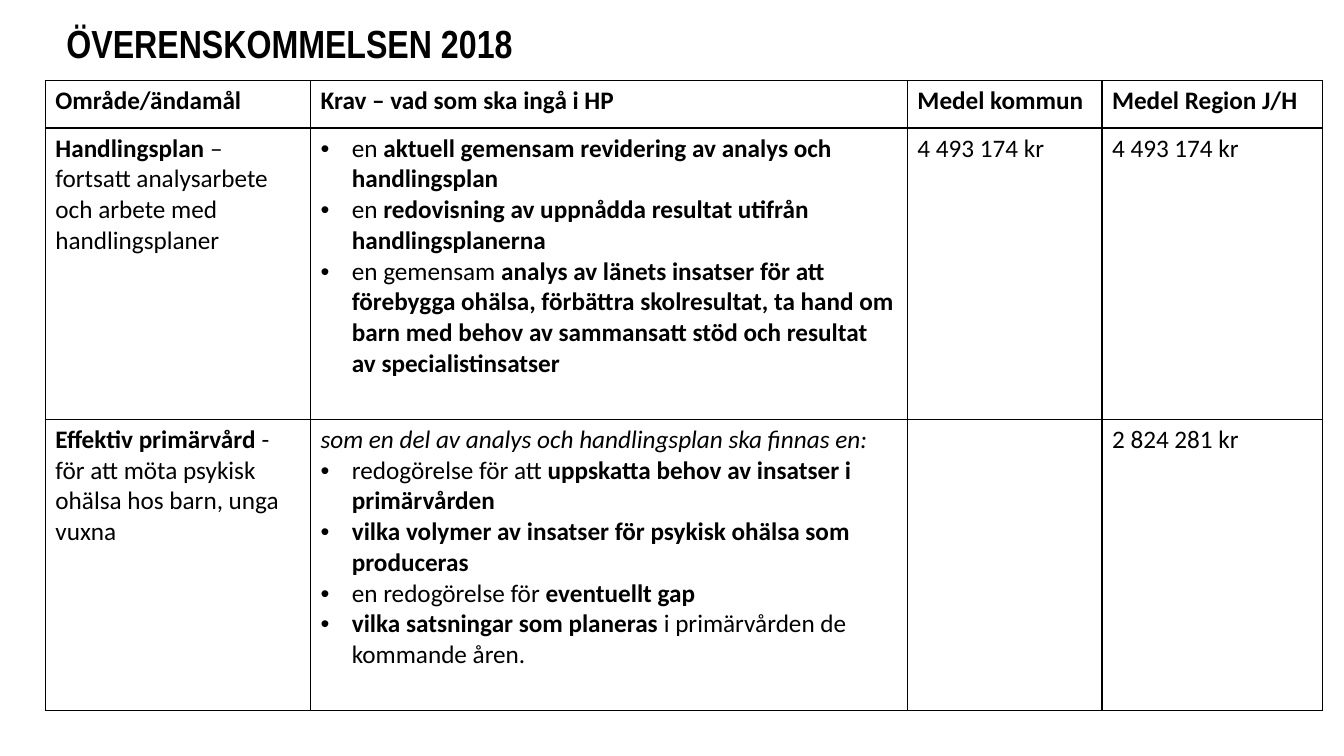
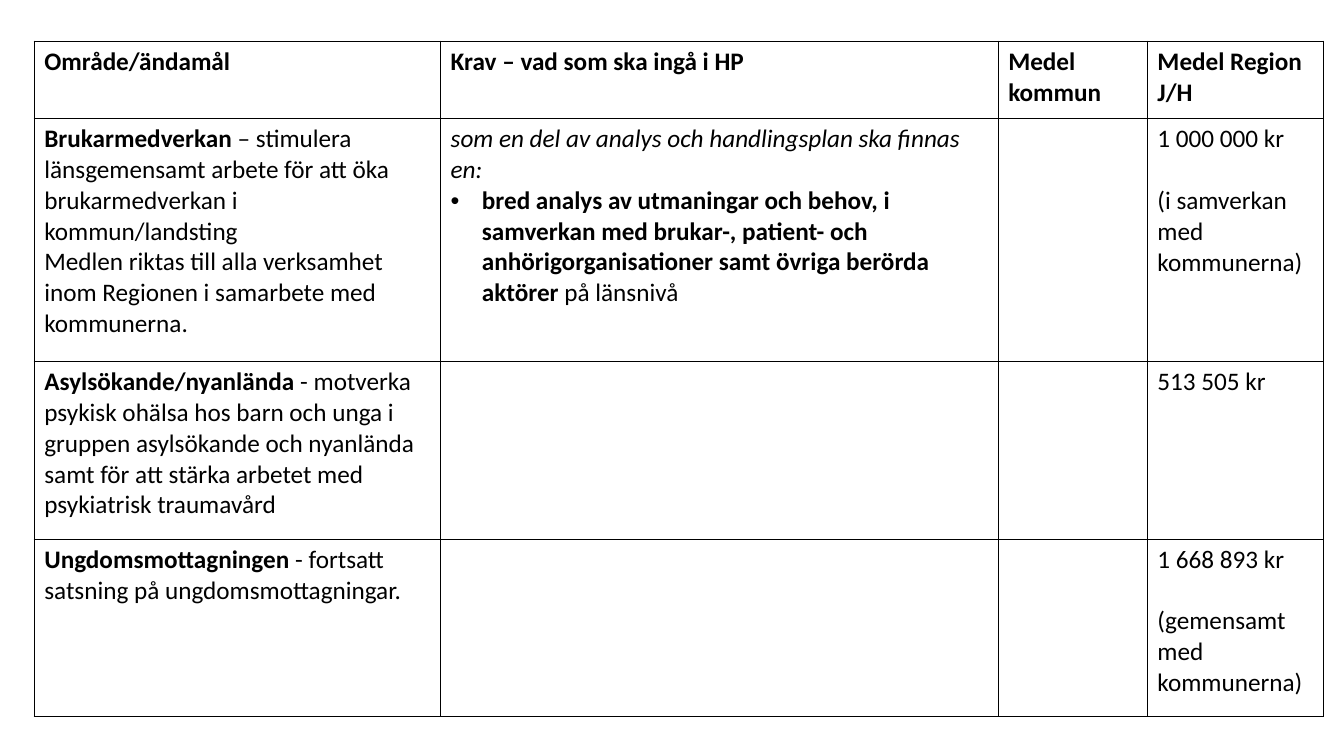
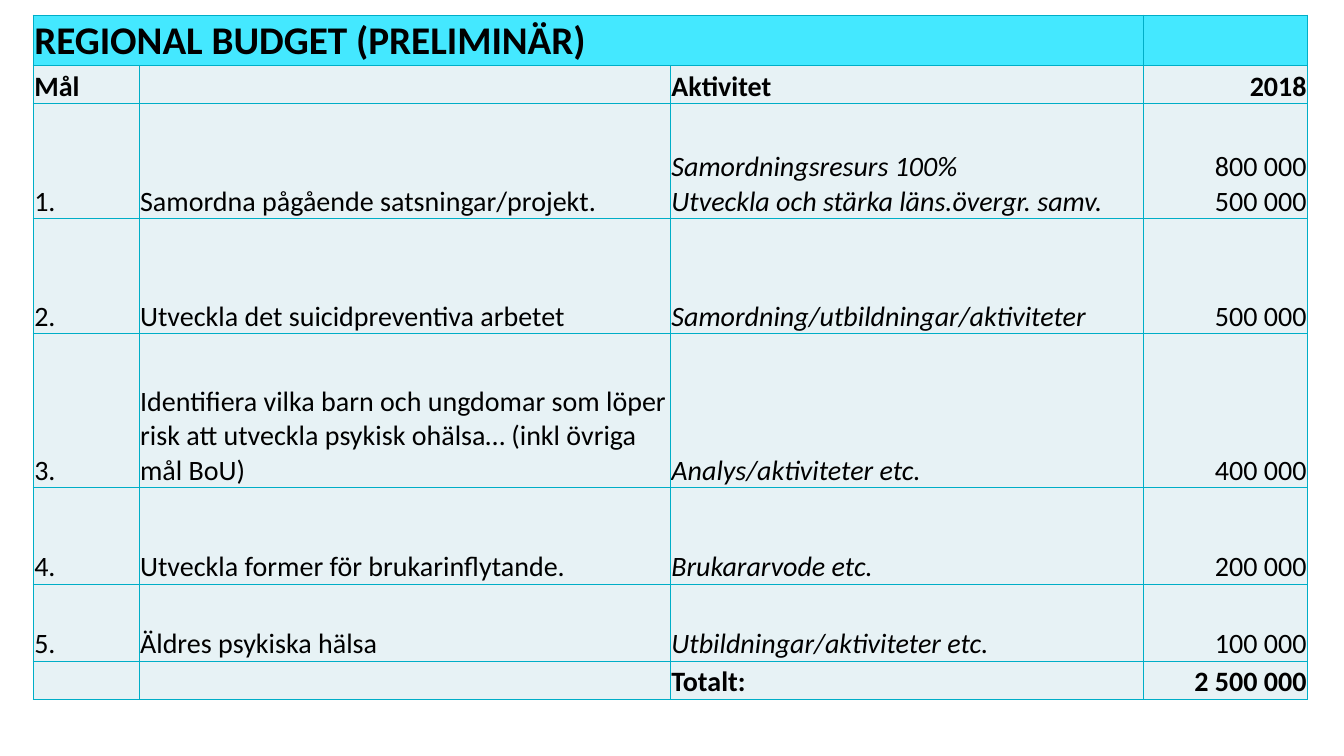
"""Build three slides on the 2018 agreement and its regional budget."""
from dataclasses import dataclass

from lxml import etree
from pptx import Presentation
from pptx.dml.color import RGBColor
from pptx.enum import text
from pptx.oxml import ns
from pptx.util import Inches, Pt


@dataclass(frozen=True)
class Theme:
    """Colours, fonts and type sizes shared by the slides."""
    ink: str = "000000"
    edge: str = "00AEC7"
    band: str = "44E8FF"
    pale: str = "E7F2F5"
    head: str = "Arial Narrow"
    font: str = "Calibri"
    big: int = 28
    mid: int = 20
    base: int = 18
    gap: int = 22
    dent: float = 0.31


@dataclass(frozen=True)
class Para:
    """A paragraph of (text, style) runs."""
    runs: tuple
    dot: bool = False
    gap: int = 0
    right: bool = False


@dataclass(frozen=True)
class Look:
    """The dress of one kind of table."""
    line: str
    size: int
    fill: str = ""
    tight: bool = False


T = Theme()
PLAN = Look(T.ink, T.base)
COST = Look(T.edge, T.mid, T.pale, True)


def para(*runs, **opts):
    """Make a paragraph; bare strings are plain runs."""
    return Para(tuple((r, "") if isinstance(r, str) else r for r in runs), **opts)


def bold(words):
    """Mark a run as bold."""
    return words, "b"


def slant(words):
    """Mark a run as italic."""
    return words, "i"


def dot(*runs):
    """Make a bulleted paragraph."""
    return para(*runs, dot=True)


def sums(*words):
    """Make right-aligned paragraphs, one per amount."""
    return [para(w, right=True) for w in words]


def add_run(p, words, style, size, font):
    """Add one styled run to a paragraph."""
    r = p.add_run()
    r.text = words
    f = r.font
    f.name, f.size = font, Pt(size)
    f.bold, f.italic = style == "b", style == "i"
    f.color.rgb = RGBColor.from_string(T.ink)


def add_dot(p):
    """Give a paragraph a hanging bullet."""
    ppr = p._p.get_or_add_pPr()
    ppr.set("marL", str(Inches(T.dent)))
    ppr.set("indent", str(-Inches(T.dent)))
    etree.SubElement(ppr, ns.qn("a:buFont")).set("typeface", "Arial")
    etree.SubElement(ppr, ns.qn("a:buChar")).set("char", "•")


def add_text(frame, paras, size):
    """Fill a text frame with paragraphs."""
    for n, item in enumerate(paras):
        p = frame.add_paragraph() if n else frame.paragraphs[0]
        if item.gap:
            p.space_before = Pt(item.gap)
        if item.right:
            p.alignment = text.PP_ALIGN.RIGHT
        if item.dot:
            add_dot(p)
        for words, style in item.runs:
            add_run(p, words, style, size, T.font)


def add_edge(cell, color):
    """Draw a one-point border round a cell."""
    tcpr = cell._tc.get_or_add_tcPr()
    for n, side in enumerate("LRTB"):
        ln = etree.Element(ns.qn(f"a:ln{side}"), w=str(Pt(1)))
        fill = etree.SubElement(ln, ns.qn("a:solidFill"))
        etree.SubElement(fill, ns.qn("a:srgbClr")).set("val", color)
        tcpr.insert(n, ln)


def add_fill(cell, color):
    """Fill a cell, or clear it when no colour is given."""
    if color:
        cell.fill.solid()
        cell.fill.fore_color.rgb = RGBColor.from_string(color)
    else:
        cell.fill.background()


def add_grid(slide, left, top, cols, rows, cells, look):
    """Add a table with bordered, filled cells."""
    shape = slide.shapes.add_table(
        len(rows), len(cols), Inches(left), Inches(top),
        Inches(sum(cols)), Inches(sum(rows)))
    grid = shape.table
    grid.first_row = grid.horz_banding = False
    for col, width in zip(grid.columns, cols):
        col.width = Inches(width)
    for row, height, line in zip(grid.rows, rows, cells):
        row.height = Inches(height)
        for cell, paras in zip(row.cells, line):
            add_fill(cell, look.fill)
            add_edge(cell, look.line)
            if look.tight:
                cell.vertical_anchor = text.MSO_ANCHOR.BOTTOM
                cell.margin_left = cell.margin_right = Inches(0.01)
                cell.margin_top, cell.margin_bottom = Inches(0.01), 0
            add_text(cell.text_frame, paras, look.size)
    return grid


def add_title(slide, words):
    """Add the slide title."""
    box = slide.shapes.add_textbox(
        Inches(0.56), Inches(0.22), Inches(11.29), Inches(0.47))
    frame = box.text_frame
    frame.word_wrap = True
    frame.vertical_anchor = text.MSO_ANCHOR.MIDDLE
    p = frame.paragraphs[0]
    p.line_spacing = 0.9
    add_run(p, words, "b", T.big, T.head)


def heads(*fund):
    """Make the header row of a plan table."""
    return [[para(bold("Område/ändamål"))],
            [para(bold("Krav – vad som ska ingå i HP"))],
            [para(bold(w)) for w in fund],
            [para(bold("Medel Region J/H"))]]


def add_deal(slide):
    """Build the slide on plans and primary care."""
    kr = [para("4 493 174 kr")]
    cells = [
        heads("Medel kommun"),
        [[para(bold("Handlingsplan "),
               "– fortsatt analysarbete och arbete med handlingsplaner")],
         [dot("en ", bold("aktuell gemensam revidering av analys och handlingsplan")),
          dot("en ", bold("redovisning av uppnådda resultat utifrån handlingsplanerna")),
          dot("en gemensam ", bold(
              "analys av länets insatser för att förebygga ohälsa, förbättra "
              "skolresultat, ta hand om barn med behov av sammansatt stöd och "
              "resultat av specialistinsatser"))],
         kr, kr],
        [[para(bold("Effektiv primärvård "),
               "- för att möta psykisk ohälsa hos barn, unga vuxna")],
         [para(slant("som en del av analys och handlingsplan ska finnas en:")),
          dot("redogörelse för att ",
              bold("uppskatta behov av insatser i primärvården")),
          dot(bold("vilka volymer av insatser för psykisk ohälsa som produceras")),
          dot("en redogörelse för ", bold("eventuellt gap")),
          dot(bold("vilka satsningar som planeras "),
              "i primärvården de kommande åren.")],
         [], [para("2 824 281 kr")]],
    ]
    add_grid(slide, 0.45, 0.8, [2.63, 5.92, 1.93, 2.19], [0.47, 2.89, 2.89],
             cells, PLAN)
    add_title(slide, "ÖVERENSKOMMELSEN 2018")


def add_aims(slide):
    """Build the slide on users, asylum seekers and youth clinics."""
    cells = [
        heads("Medel", "kommun"),
        [[para(bold("Brukarmedverkan"),
               " – stimulera länsgemensamt arbete för att öka "
               "brukarmedverkan i kommun/landsting"),
          para("Medlen riktas till alla verksamhet inom Regionen i samarbete "
               "med kommunerna.")],
         [para(slant("som en del av analys och handlingsplan ska finnas en:")),
          dot(bold("bred analys av utmaningar och behov, i samverkan med "
                   "brukar-, patient- och anhörigorganisationer samt övriga "
                   "berörda aktörer"), " på länsnivå")],
         [], [para("1 000 000 kr"),
              para("(i samverkan med kommunerna)", gap=T.gap)]],
        [[para(bold("Asylsökande/nyanlända"),
               " - motverka psykisk ohälsa hos barn och unga i gruppen "
               "asylsökande och nyanlända samt för att stärka arbetet med "
               "psykiatrisk traumavård")],
         [], [], [para("513 505 kr")]],
        [[para(bold("Ungdomsmottagningen"),
               " - fortsatt satsning på ungdomsmottagningar.")],
         [], [], [para("1 668 893 kr"),
                  para("(gemensamt med kommunerna)", gap=T.gap)]],
    ]
    add_grid(slide, 0.34, 0.41, [4.03, 5.53, 1.48, 1.75],
             [0.77, 2.41, 1.76, 1.76], cells, PLAN)


def add_cost(slide):
    """Build the budget slide."""
    goals = [
        ("Samordna pågående satsningar/projekt.",
         ["Samordningsresurs 100%", "Utveckla och stärka läns.övergr. samv."],
         ["800 000", "500 000"]),
        ("Utveckla det suicidpreventiva arbetet",
         ["Samordning/utbildningar/aktiviteter"], ["500 000"]),
        ("Identifiera vilka barn och ungdomar som löper risk att utveckla "
         "psykisk ohälsa… (inkl övriga mål BoU)",
         ["Analys/aktiviteter etc."], ["400 000"]),
        ("Utveckla former för brukarinflytande.",
         ["Brukararvode etc."], ["200 000"]),
        ("Äldres psykiska hälsa",
         ["Utbildningar/aktiviteter etc."], ["100 000"]),
    ]
    cells = [
        [[], [], [], []],
        [[para(bold("Mål"))], [], [para(bold("Aktivitet"))], sums(bold("2018"))],
        *[[[para(f"{n}.")], [para(goal)], [para(slant(a)) for a in acts],
           sums(*costs)] for n, (goal, acts, costs) in enumerate(goals, 1)],
        [[], [], [para(bold("Totalt:"))], sums(bold("2 500 000"))],
    ]
    grid = add_grid(slide, 0.33, 0.15, [1.05, 5.27, 4.69, 1.63],
                    [0.5, 0.38, 1.14, 1.14, 1.53, 0.96, 0.76, 0.38], cells, COST)
    for cell in grid.rows[0].cells:
        add_fill(cell, T.band)
    first = grid.cell(0, 0)
    first.merge(grid.cell(0, 2))
    add_text(first.text_frame, [para(bold("REGIONAL BUDGET (PRELIMINÄR)"))], T.big)


def main():
    """Build and save the slides."""
    deck = Presentation()
    deck.slide_width, deck.slide_height = Inches(13.33), Inches(7.5)
    for build in (add_deal, add_aims, add_cost):
        build(deck.slides.add_slide(deck.slide_layouts[6]))
    deck.save("out.pptx")


if __name__ == "__main__":
    main()
